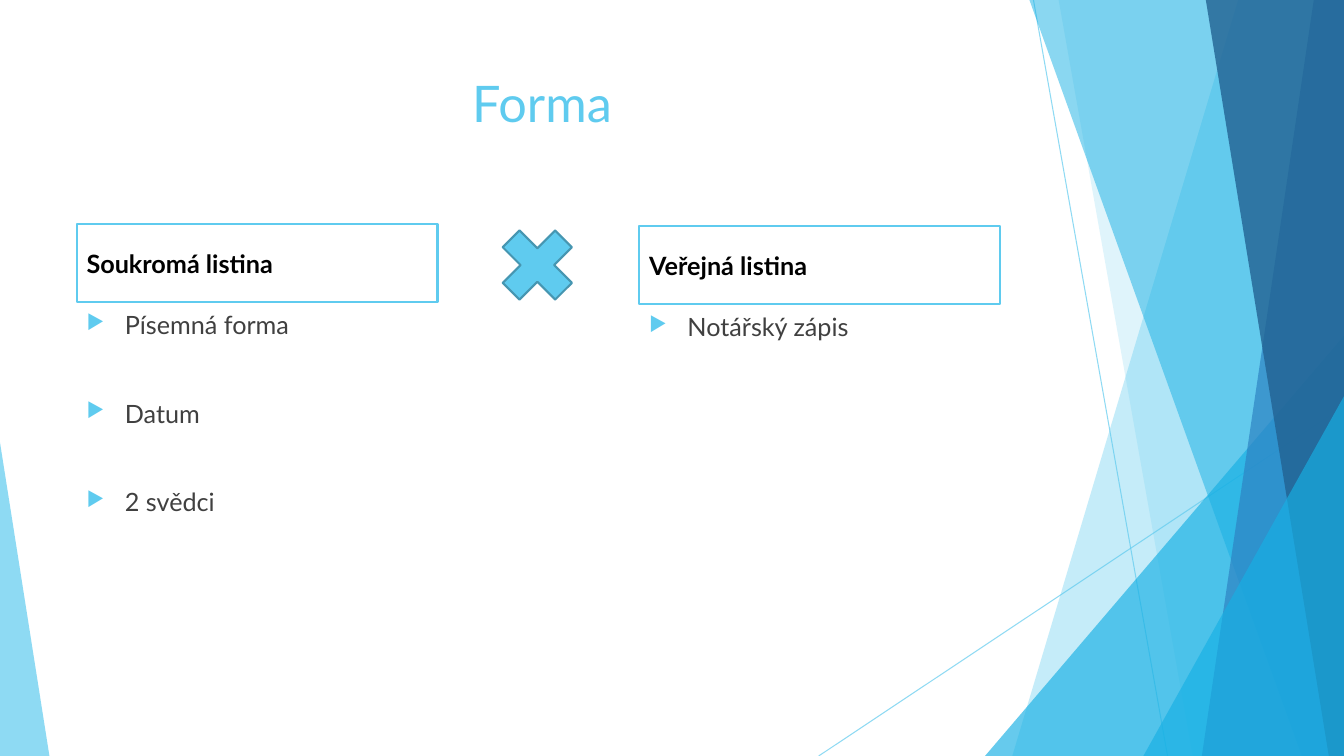
from lxml import etree
from pptx import Presentation
from pptx.dml.color import RGBColor
from pptx.enum import shapes, text
from pptx.oxml import ns
from pptx.util import Inches, Pt

WIDTH, HEIGHT = 13.33, 7.5
SKY, AZURE, BLUE, NAVY = "5FCBEF", "17B0E4", "2E83C3", "226292"
BODY, BLACK, WHITE, CROSS_EDGE = "404040", "000000", "FFFFFF", "4696B1"

# Each facet reaches the right edge: top x, bottom x, colour, opacity in percent
BACK_FACETS = [(12.28, 10.04, SKY, 36), (10.5, 11.83, SKY, 20)]
FRONT_FACETS = [(10.21, 12.91, AZURE, 50), (13.03, 11.92, BLUE, 70),
                (11.96, 13.18, NAVY, 80)]


def rgb(value):
    return RGBColor.from_string(value)


def add_child(parent, tag, **attributes):
    return etree.SubElement(parent, ns.qn(tag), **attributes)


def set_opacity(properties, percent):
    color = next(properties.iter(ns.qn("a:srgbClr")))
    add_child(color, "a:alpha", val=str(percent * 1000))


def paint(shape, fill, opacity=100, line=None):
    shape.shadow.inherit = False
    shape.fill.solid()
    shape.fill.fore_color.rgb = rgb(fill)
    if opacity < 100:
        set_opacity(shape.fill._xPr, opacity)
    if line:
        shape.line.color.rgb = rgb(line)
        shape.line.width = Pt(1.5)
    else:
        shape.line.fill.background()


def add_preset(slide, kind, box, **style):
    shape = slide.shapes.add_shape(kind, *map(Inches, box))
    paint(shape, **style)
    return shape


def add_ray(slide, start, end):
    ray = slide.shapes.add_connector(shapes.MSO_CONNECTOR.STRAIGHT,
                                     *map(Inches, start + end))
    ray.line.color.rgb = rgb(SKY)
    ray.line.width = Pt(0.75)
    set_opacity(ray.line._ln, 70)
    add_child(ray._element.spPr, "a:effectLst")


def add_facet(slide, top_x, bottom_x, color, opacity):
    corners = [(WIDTH, 0), (WIDTH, HEIGHT), (bottom_x, HEIGHT)]
    builder = slide.shapes.build_freeform(Inches(top_x), 0)
    builder.add_line_segments([(Inches(x), Inches(y)) for x, y in corners])
    paint(builder.convert_to_shape(), color, opacity)


def add_corner(slide, box, apex, color, opacity):
    """Add a right triangle whose apex sits at the left (0) or right (1)."""
    corner = add_preset(slide, shapes.MSO_SHAPE.ISOSCELES_TRIANGLE, box,
                        fill=color, opacity=opacity)
    corner.adjustments[0] = apex


def write(shape, lines, size=18, color=BODY, bold=False, bullet=False, gap=0,
          align=text.PP_ALIGN.LEFT, anchor=text.MSO_ANCHOR.TOP):
    frame = shape.text_frame
    frame.word_wrap = True
    frame.vertical_anchor = anchor
    for index, line in enumerate(lines):
        paragraph = frame.add_paragraph() if index else frame.paragraphs[0]
        paragraph.alignment = align
        if index:
            paragraph.space_before = Pt(gap)
        if bullet:
            add_bullet(paragraph)
        run = paragraph.add_run()
        run.text = line
        run.font.name = "Lato"
        run.font.size = Pt(size)
        run.font.bold = bold
        run.font.color.rgb = rgb(color)


def add_bullet(paragraph):
    properties = paragraph._p.get_or_add_pPr()
    indent = Inches(0.38)
    properties.set("marL", str(indent))
    properties.set("indent", str(-indent))
    color = add_child(properties, "a:buClr")
    add_child(color, "a:srgbClr", val=SKY)
    add_child(properties, "a:buSzPct", val="80000")
    add_child(properties, "a:buChar", char="▶")


def add_backdrop(slide):
    add_ray(slide, (10.25, 0), (11.58, HEIGHT))
    add_ray(slide, (WIDTH, 4.03), (8.12, HEIGHT))
    for facet in BACK_FACETS:
        add_facet(slide, *facet)
    add_corner(slide, (9.77, 3.33, 3.56, 4.17), 1, AZURE, 66)
    for facet in FRONT_FACETS:
        add_facet(slide, *facet)
    add_corner(slide, (11.34, 3.93, 1.99, 3.57), 1, AZURE, 66)
    add_corner(slide, (0, 4.39, 0.49, 3.11), 0, SKY, 70)


def add_title(slide, box, title):
    shape = slide.shapes.add_textbox(*map(Inches, box))
    write(shape, [title], size=36, color=SKY, align=text.PP_ALIGN.CENTER)


def add_form_column(slide, left, top, heading, items):
    """Add a framed heading with its bulleted list directly below."""
    heading_height = 0.78
    body = slide.shapes.add_textbox(
        *map(Inches, (left, top + heading_height + 0.02, 4.58, 3.61)))
    write(body, items, bullet=True, gap=41.6)
    frame = add_preset(slide, shapes.MSO_SHAPE.RECTANGLE,
                       (left, top, 3.58, heading_height), fill=WHITE, line=SKY)
    write(frame, [heading], color=BLACK, bold=True,
          anchor=text.MSO_ANCHOR.MIDDLE)


def main():
    presentation = Presentation()
    presentation.slide_width = Inches(WIDTH)
    presentation.slide_height = Inches(HEIGHT)
    slide = presentation.slides.add_slide(presentation.slide_layouts[6])
    add_backdrop(slide)
    add_title(slide, (0.74, 0.67, 9.4, 1.44), "Forma ")
    add_form_column(slide, 0.76, 2.22, "Soukromá listina",
                    ["Písemná forma", "Datum", "2 svědci"])
    add_form_column(slide, 6.34, 2.24, "Veřejná listina", ["Notářský zápis"])
    add_preset(slide, shapes.MSO_SHAPE.MATH_MULTIPLY, (4.83, 2.13, 1, 1),
               fill=SKY, line=CROSS_EDGE)
    presentation.save("out.pptx")


if __name__ == "__main__":
    main()
